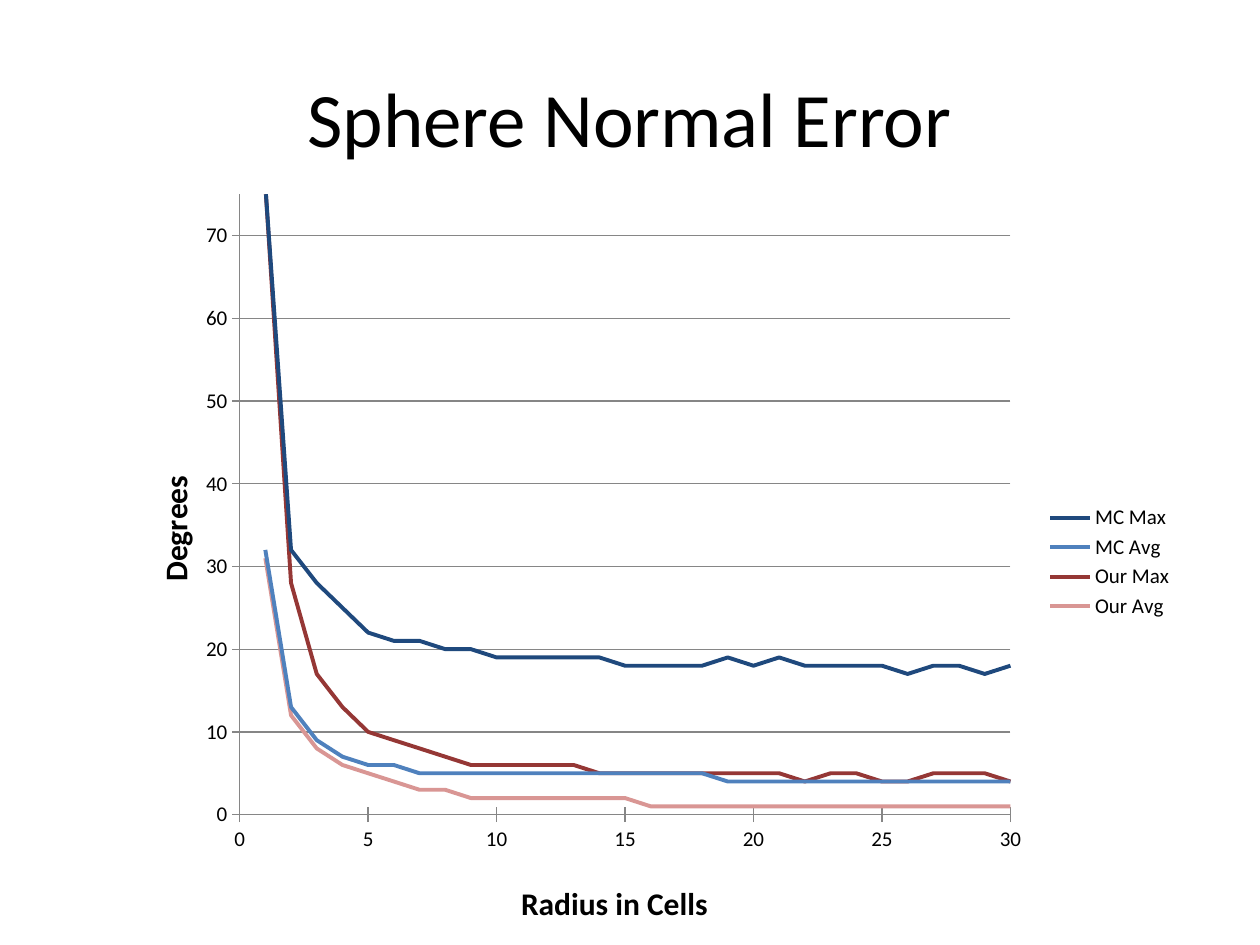
from dataclasses import dataclass

from lxml.etree import SubElement
from pptx import Presentation
from pptx.chart.axis import ValueAxis
from pptx.chart.chart import Chart
from pptx.chart.data import XyChartData
from pptx.dml.color import RGBColor
from pptx.enum.chart import XL_CHART_TYPE as ChartType
from pptx.enum.chart import XL_LEGEND_POSITION as LegendPosition
from pptx.enum.chart import XL_TICK_MARK as TickMark
from pptx.enum.text import MSO_ANCHOR as Anchor
from pptx.enum.text import PP_ALIGN as Align
from pptx.oxml.ns import qn
from pptx.slide import Slide
from pptx.text.text import Font
from pptx.util import Inches, Pt

WIDTH, HEIGHT = Inches(10), Inches(7.5)
FONT_NAME = "Calibri"
BLACK, GRAY = "000000", "868686"


@dataclass(frozen=True)
class ErrorCurve:
    name: str
    color: str
    degrees: list[int]


@dataclass(frozen=True)
class AxisStyle:
    title: str
    maximum: int
    step: int


CURVES = [
    ErrorCurve("MC Max", "1F497D",
               [76, 32, 28, 25, 22, 21, 21, 20, 20, 19, 19, 19, 19, 19, 18,
                18, 18, 18, 19, 18, 19, 18, 18, 18, 18, 17, 18, 18, 17, 18]),
    ErrorCurve("MC Avg", "4F81BD",
               [32, 13, 9, 7, 6, 6] + [5] * 12 + [4] * 12),
    ErrorCurve("Our Max", "953735",
               [76, 28, 17, 13, 10, 9, 8, 7, 6, 6, 6, 6, 6, 5, 5,
                5, 5, 5, 5, 5, 5, 4, 5, 5, 4, 4, 5, 5, 5, 4]),
    ErrorCurve("Our Avg", "D99694",
               [31, 12, 8, 6, 5, 4, 3, 3] + [2] * 7 + [1] * 15),
]
RADIUS_AXIS = AxisStyle("Radius in Cells", 30, 5)
DEGREES_AXIS = AxisStyle("Degrees", 75, 10)


def rgb(color: str) -> RGBColor:
    return RGBColor.from_string(color)


def style_font(font: Font, size: float, bold: bool = False) -> None:
    font.name = FONT_NAME
    font.size = Pt(size)
    font.bold = bold
    font.color.rgb = rgb(BLACK)


def add_title(slide: Slide, text: str) -> None:
    box = slide.shapes.add_textbox(
        int(WIDTH * 0.05), int(HEIGHT * 0.04), int(WIDTH * 0.9), Inches(1.25))
    frame = box.text_frame
    frame.word_wrap = True
    frame.vertical_anchor = Anchor.MIDDLE
    paragraph = frame.paragraphs[0]
    paragraph.alignment = Align.CENTER
    run = paragraph.add_run()
    run.text = text
    style_font(run.font, 44)


def style_axis(axis: ValueAxis, style: AxisStyle, gridlines: bool) -> None:
    axis.minimum_scale = 0
    axis.maximum_scale = style.maximum
    axis.major_unit = style.step
    axis.major_tick_mark = TickMark.CROSS
    axis.minor_tick_mark = TickMark.NONE
    axis.tick_labels.number_format = "General"
    axis.tick_labels.number_format_is_linked = False
    style_font(axis.tick_labels.font, 12)
    lines = [axis.format.line]
    axis.has_major_gridlines = gridlines
    if gridlines:
        lines.append(axis.major_gridlines.format.line)
    for line in lines:
        line.color.rgb = rgb(GRAY)
        line.width = Pt(0.75)
    run = axis.axis_title.text_frame.paragraphs[0].add_run()
    run.text = style.title
    style_font(run.font, 18, bold=True)


def place(chart: Chart, query: str, index: int, **shares: float) -> None:
    element = chart.element.xpath(query)[0]
    for old_layout in element.findall(qn("c:layout")):
        element.remove(old_layout)
    layout = SubElement(element, qn("c:layout"))
    element.insert(index, layout)
    manual = SubElement(layout, qn("c:manualLayout"))
    settings = {"xMode": "edge", "yMode": "edge", **shares}
    if query.endswith("plotArea"):
        settings = {"layoutTarget": "inner", **settings}
    for name, value in settings.items():
        SubElement(manual, qn(f"c:{name}")).set("val", str(value))


def add_error_chart(slide: Slide) -> None:
    data = XyChartData()
    for curve in CURVES:
        points = data.add_series(curve.name)
        for radius, degrees in enumerate(curve.degrees, start=1):
            points.add_data_point(radius, degrees)
    chart = slide.shapes.add_chart(
        ChartType.XY_SCATTER_LINES_NO_MARKERS, Inches(0.83), Inches(1.42),
        Inches(8.58), Inches(6.08), data).chart
    style_font(chart.font, 10)
    chart.has_title = False
    plot = chart.plots[0]
    plot.vary_by_categories = False
    for series, curve in zip(plot.series, CURVES):
        series.smooth = False
        series.format.line.color.rgb = rgb(curve.color)
        series.format.line.width = Pt(2.25)

    style_axis(chart.category_axis, RADIUS_AXIS, gridlines=False)
    style_axis(chart.value_axis, DEGREES_AXIS, gridlines=True)
    chart.has_legend = True
    chart.legend.position = LegendPosition.RIGHT
    chart.legend.include_in_layout = False
    style_font(chart.legend.font, 12)

    place(chart, ".//c:plotArea", 0, x=0.125, y=0.02, w=0.713, h=0.81)
    place(chart, ".//c:valAx[1]/c:title", 1, x=0.38, y=0.91)
    place(chart, ".//c:valAx[2]/c:title", 1, x=0.04, y=0.38)
    place(chart, ".//c:legend", 1, x=0.87, y=0.42, w=0.12, h=0.16)


def main() -> None:
    presentation = Presentation()
    presentation.slide_width, presentation.slide_height = WIDTH, HEIGHT
    slide = presentation.slides.add_slide(presentation.slide_layouts[6])
    add_title(slide, "Sphere Normal Error")
    add_error_chart(slide)
    presentation.save("out.pptx")


if __name__ == "__main__":
    main()
